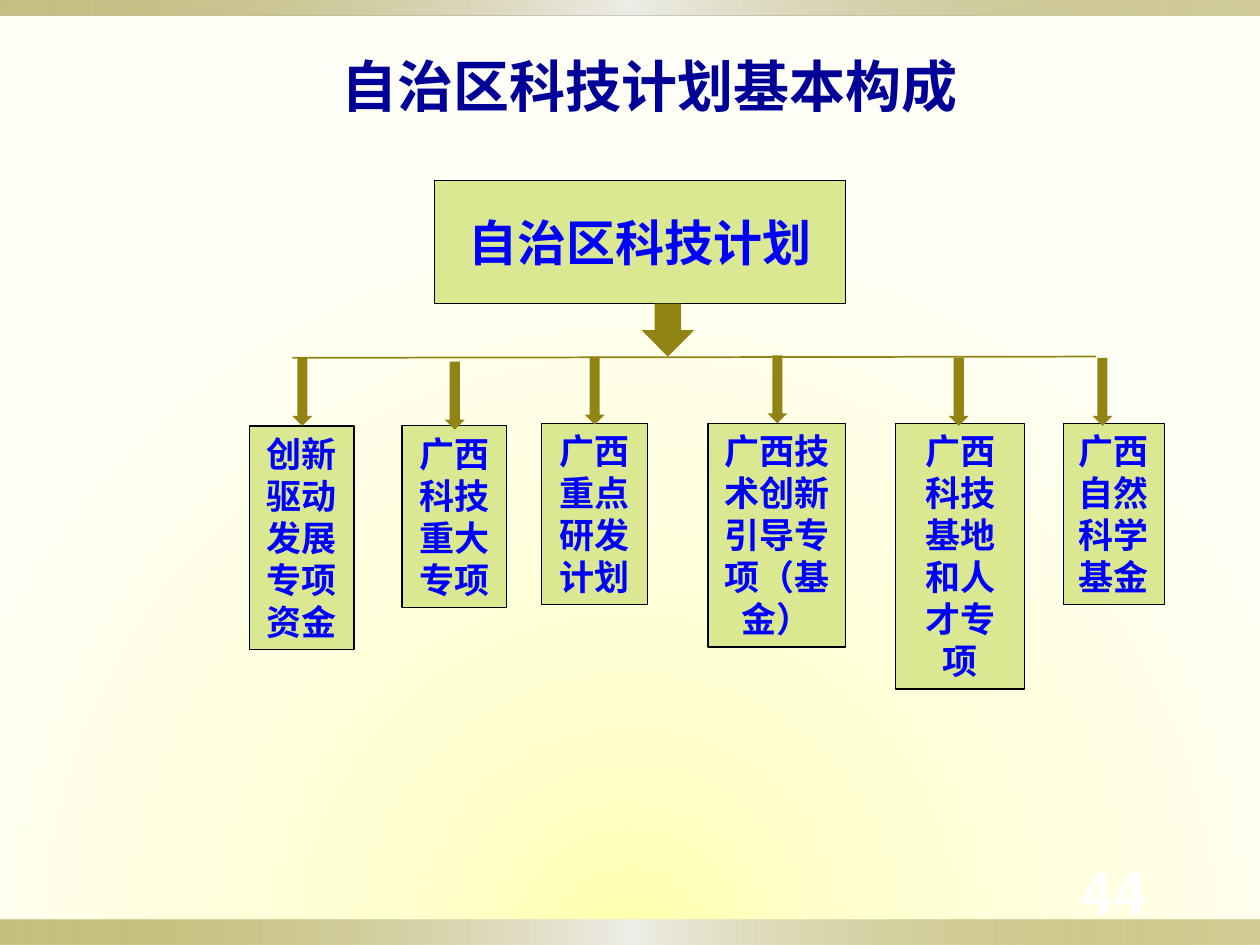
from dataclasses import dataclass
from lxml.etree import SubElement
from pptx import Presentation
from pptx.dml.color import RGBColor
from pptx.enum.shapes import MSO_CONNECTOR, MSO_SHAPE
from pptx.enum.text import MSO_ANCHOR, MSO_AUTO_SIZE, PP_ALIGN
from pptx.oxml.ns import qn
from pptx.util import Inches, Pt


@dataclass(frozen=True)
class Theme:
    olive: str = "918415"
    silver: str = "EEEDE8"
    box: str = "DAE892"
    border: str = "000000"
    box_text: str = "0000FF"
    title_text: str = "000099"
    number_text: str = "FFFFFF"
    glow: tuple = ((0, "FFFFAC", 100), (31, "FFFFD2", 100), (100, "FFFFF7", 100))
    title_size: int = 32
    root_size: int = 28
    branch_size: int = 20
    latin: str = "Arial"
    chinese: str = "Noto Sans CJK SC"


THEME = Theme()
COLUMNS, ROWS = 100, 75
CELL = Inches(10) / COLUMNS

# Branch heights follow from the number of text rows
LINE_ROWS, PADDING_ROWS = 3.35, 1
ARROW_WIDTH, ARROW_HEIGHT = 1.6, 5.4

# Text, left column, top row, width, lines, arrow centre, arrow top
BRANCHES = (
    ("创新驱动发展专项资金", 19.8, 33.8, 8.3, 5, 24, 28.4),
    ("广西科技重大专项", 31.9, 33.8, 8.3, 4, 36.1, 28.7),
    ("广西重点研发计划", 43, 33.6, 8.4, 4, 47.2, 28.3),
    ("广西技术创新引导专项（基金）", 56.2, 33.6, 10.9, 5, 61.7, 28.2),
    ("广西科技基地和人才专项", 71.1, 33.6, 10.2, 6, 76.1, 28.4),
    ("广西自然科学基金", 84.4, 33.6, 8, 4, 87.5, 28.4),
)


def cells(*lengths):
    return [round(length * CELL) for length in lengths]


def fill_gradient(fill, owner, stops, direction, **settings):
    """Fill with (position, colour, opacity) stops, linear or circular."""
    fill.gradient()
    gradient = owner.find(".//" + qn("a:gradFill"))
    for child in list(gradient):
        gradient.remove(child)
    stop_list = SubElement(gradient, qn("a:gsLst"))
    for position, color, opacity in stops:
        stop = SubElement(stop_list, qn("a:gs"), pos=str(position * 1000))
        tint = SubElement(stop, qn("a:srgbClr"), val=color)
        if opacity < 100:
            SubElement(tint, qn("a:alpha"), val=str(opacity * 1000))
    shade = SubElement(gradient, qn("a:" + direction), **settings)
    if direction == "path":
        SubElement(shade, qn("a:fillToRect"),
                   l="50000", t="150000", r="50000", b="0")


def write(shape, text, size, color, font=THEME.chinese, anchor=MSO_ANCHOR.TOP,
          wrap=True, grow=False):
    frame = shape.text_frame
    frame.word_wrap = wrap
    frame.vertical_anchor = anchor
    if grow:
        frame.auto_size = MSO_AUTO_SIZE.SHAPE_TO_FIT_TEXT
    paragraph = frame.paragraphs[0]
    paragraph.alignment = PP_ALIGN.CENTER
    run = paragraph.add_run()
    run.text = text
    run.font.name = font
    run.font.size = Pt(size)
    run.font.bold = True
    run.font.color.rgb = RGBColor.from_string(color)
    SubElement(run.font._element, qn("a:ea"), typeface=THEME.chinese)


def add_solid(slide, preset, area, color, border=None):
    shape = slide.shapes.add_shape(preset, *cells(*area))
    shape.shadow.inherit = False
    shape.fill.solid()
    shape.fill.fore_color.rgb = RGBColor.from_string(color)
    if border:
        shape.line.color.rgb = RGBColor.from_string(border)
        shape.line.width = Pt(0.75)
    else:
        shape.line.fill.background()
    return shape


def add_box(slide, area, text, size, **layout):
    box = add_solid(slide, MSO_SHAPE.RECTANGLE, area, THEME.box, THEME.border)
    write(box, text, size, THEME.box_text, **layout)


def add_down_arrow(slide, centre, top, width, height):
    add_solid(slide, MSO_SHAPE.DOWN_ARROW,
              (centre - width / 2, top, width, height), THEME.olive)


def add_band(slide, top, height):
    band = add_solid(slide, MSO_SHAPE.RECTANGLE, (0, top, COLUMNS, height), THEME.olive)
    stops = ((0, THEME.olive, 50), (50, THEME.silver, 100), (100, THEME.olive, 40))
    fill_gradient(band.fill, band.element, stops, "lin", ang="0", scaled="1")


def add_rail(slide, start, end):
    rail = slide.shapes.add_connector(MSO_CONNECTOR.STRAIGHT, *cells(*start, *end))
    rail.line.color.rgb = RGBColor.from_string(THEME.olive)
    rail.line.width = Pt(1)
    SubElement(rail.element.spPr, qn("a:effectLst"))


def add_label(slide, area, text, color, inset=None, **layout):
    label = slide.shapes.add_textbox(*cells(*area))
    if inset is not None:
        frame = label.text_frame
        frame.margin_left = frame.margin_right = Inches(inset)
        frame.margin_top = frame.margin_bottom = Inches(inset)
    write(label, text, THEME.title_size, color, **layout)


def main():
    deck = Presentation()
    deck.slide_width, deck.slide_height = cells(COLUMNS, ROWS)
    slide = deck.slides.add_slide(deck.slide_layouts[6])

    # Background and edge bands
    fill_gradient(slide.background.fill, slide.element, THEME.glow,
                  "path", path="circle")
    add_band(slide, ROWS - 2, 2)
    add_band(slide, 0, 1.2)

    # Title and page number
    add_label(slide, (9.8, 3.6, 83.5, 6.3), "自治区科技计划基本构成",
              THEME.title_text, font=THEME.latin, grow=True)
    add_label(slide, (76.7, 68.3, 23.3, 5.2), "44", THEME.number_text,
              inset=0.05, anchor=MSO_ANCHOR.MIDDLE)

    # Root of the plan
    add_box(slide, (34.5, 14.3, 32.6, 9.8), "自治区科技计划", THEME.root_size,
            anchor=MSO_ANCHOR.MIDDLE, wrap=False)

    # Branches below the rail
    add_rail(slide, (23.2, 28.4), (87, 28.3))
    for text, left, top, width, lines, centre, arrow_top in BRANCHES:
        height = PADDING_ROWS + lines * LINE_ROWS
        add_box(slide, (left, top, width, height), text, THEME.branch_size, grow=True)
        add_down_arrow(slide, centre, arrow_top, ARROW_WIDTH, ARROW_HEIGHT)
    add_down_arrow(slide, 53, 24.1, 4.2, 4.2)

    deck.save("out.pptx")


if __name__ == "__main__":
    main()
